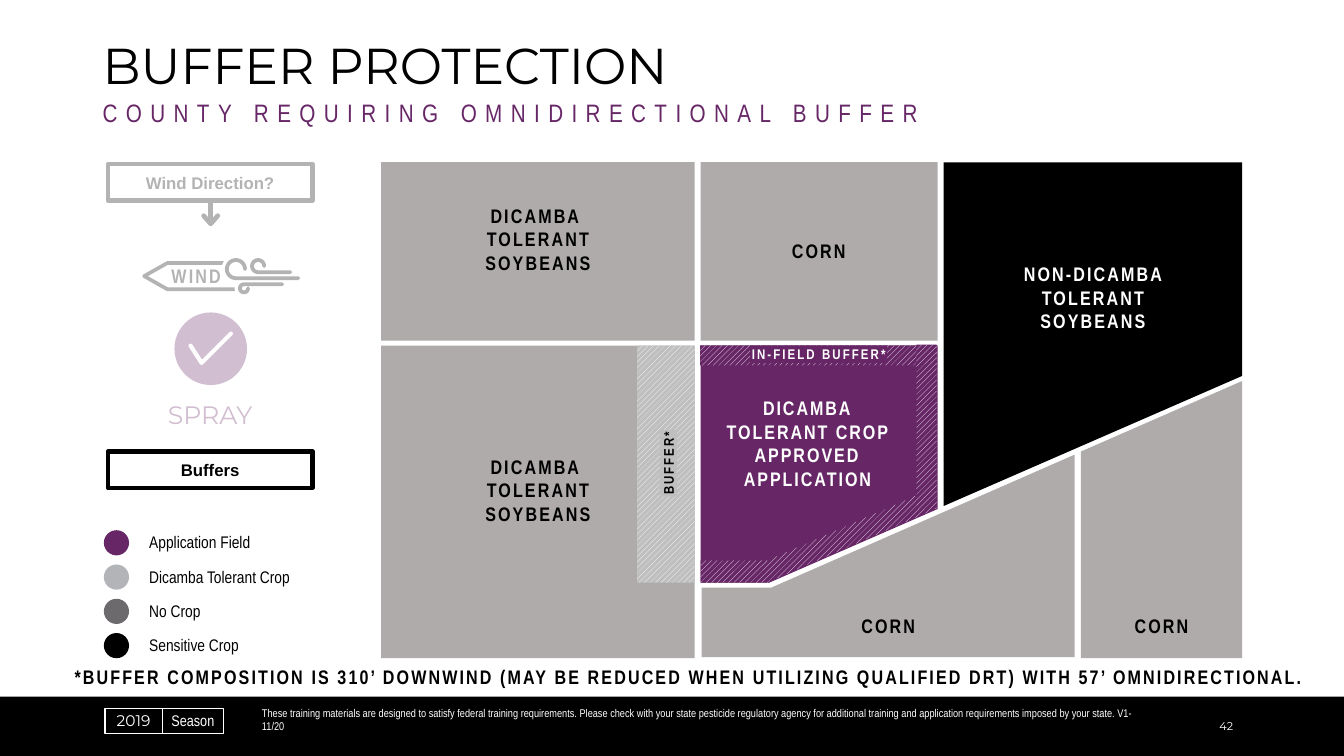
from math import cos, pi, sin

from lxml import etree
from pptx import Presentation
from pptx.dml.color import RGBColor
from pptx.enum.dml import MSO_PATTERN
from pptx.enum.shapes import MSO_CONNECTOR, MSO_SHAPE
from pptx.enum.text import MSO_ANCHOR, PP_ALIGN
from pptx.oxml.ns import qn
from pptx.util import Inches, Pt

RECT, OVAL = MSO_SHAPE.RECTANGLE, MSO_SHAPE.OVAL
LEFT, CENTER, RIGHT = PP_ALIGN.LEFT, PP_ALIGN.CENTER, PP_ALIGN.RIGHT
TOP, MIDDLE, BOTTOM = MSO_ANCHOR.TOP, MSO_ANCHOR.MIDDLE, MSO_ANCHOR.BOTTOM
DIAGONAL = MSO_PATTERN.WIDE_UPWARD_DIAGONAL
STRAIGHT = MSO_CONNECTOR.STRAIGHT
NARROW, MONT, ARIAL = "Arial Narrow", "Montserrat", "Arial"
BLACK, WHITE, PURPLE = "000000", "FFFFFF", "672767"
FIELD, BUFFER = "AFABAB", "BFBFBF"
FLUSH, PADDED, FOOT = (0, 0, 0, 0), (0.1, 0.05, 0.1, 0.05), (0.1, 0.05, 0.1, 0)


def color(code):
    return RGBColor.from_string(code)


def paint(shape, fill=None, line=None, width=1):
    shape.shadow.inherit = False
    if fill:
        shape.fill.solid()
        shape.fill.fore_color.rgb = color(fill)
    else:
        shape.fill.background()
    if line:
        shape.line.color.rgb = color(line)
        shape.line.width = Pt(width)
    else:
        shape.line.fill.background()


def block(slide, box, fill=None, line=None, width=1, kind=RECT, turn=0):
    shape = slide.shapes.add_shape(kind, *map(Inches, box))
    paint(shape, fill, line, width)
    shape.rotation = turn
    return shape


def hatch(slide, box, back, turn=0):
    shape = block(slide, box, back, turn=turn)
    shape.fill.patterned()
    shape.fill.pattern = DIAGONAL
    shape.fill.fore_color.rgb = color(WHITE)
    shape.fill.back_color.rgb = color(back)


def outline(slide, points, fill=None, line=None, width=1, close=True):
    """Draw a polygon, or a round-ended stroke if it is not closed."""
    path = [(Inches(x), Inches(y)) for x, y in points]
    pen = slide.shapes.build_freeform(*path[0], scale=1.0)
    pen.add_line_segments(path[1:], close=close)
    shape = pen.convert_to_shape()
    paint(shape, fill, line, width)
    if line and not close:
        shape.line._get_or_add_ln().set("cap", "rnd")
        etree.SubElement(shape.line._get_or_add_ln(), qn("a:round"))


def write(shape, text, size, tone=BLACK, font=NARROW, bold=False, gap=0,
          align=LEFT, anchor=TOP, inset=FLUSH, wrap=False, lead=None):
    """Fill a shape with text; gap is letter spacing in points."""
    frame = shape.text_frame
    frame.text = text
    frame.word_wrap = wrap
    frame.vertical_anchor = anchor
    (frame.margin_left, frame.margin_top,
     frame.margin_right, frame.margin_bottom) = map(Inches, inset)
    for para in frame.paragraphs:
        para.alignment = align
        if lead:
            para.line_spacing = lead
        for run in para.runs:
            run.font.name, run.font.size, run.font.bold = font, Pt(size), bold
            run.font.color.rgb = color(tone)
            if gap:
                run.font._element.set("spc", str(int(gap * 100)))


def label(slide, box, text, size, **look):
    write(slide.shapes.add_textbox(*map(Inches, box)), text, size, **look)


def caption(slide, box, text, tone=BLACK, gap=1.5, wrap=False):
    label(slide, box, text, 14, tone=tone, bold=True, gap=gap,
          align=CENTER, wrap=wrap)


def tag(slide, box, text, fill, tone, turn=0):
    write(block(slide, box, fill, turn=turn), text, 10, tone=tone,
          bold=True, gap=1.5, align=CENTER)


def header(slide):
    label(slide, (0.92, 0.95, 11.5, 0.37), "COUNTY REQUIRING OMNIDIRECTIONAL BUFFER",
          18, tone=PURPLE, gap=6, inset=PADDED, wrap=True, lead=0.9)
    label(slide, (0.92, 0.35, 11.5, 0.65), "BUFFER PROTECTION", 36, font=MONT,
          anchor=MIDDLE, inset=PADDED, wrap=True, lead=0.9)


def footer(slide):
    block(slide, (0, 6.91, 13.33, 0.59), BLACK)
    block(slide, (1.04, 7.03, 1.18, 0.25), line=WHITE)
    rule = slide.shapes.add_connector(
        STRAIGHT, *map(Inches, (1.61, 7.03, 1.61, 7.28)))
    rule.line.color.rgb = color(WHITE)
    rule.line.width = Pt(1)
    etree.SubElement(rule._element.spPr, qn("a:effectLst"))
    label(slide, (1.06, 7.07, 0.53, 0.17), "2019", 11, tone=WHITE, font=MONT,
          align=CENTER, anchor=BOTTOM, wrap=True, lead=0.9)
    label(slide, (1.7, 7.07, 0.48, 0.17), "Season", 11, tone=WHITE,
          anchor=BOTTOM, wrap=True, lead=0.9)
    label(slide, (11.83, 6.9, 0.5, 0.37), "42", 8, tone=WHITE, font=MONT,
          align=RIGHT, anchor=BOTTOM, inset=FOOT, wrap=True)
    label(slide, (2.5, 6.9, 9.05, 0.37),
          "These training materials are designed to satisfy federal training "
          "requirements. Please check with your state pesticide regulatory agency "
          "for additional training and application requirements imposed by your "
          "state. V1-11/20", 8, tone=WHITE, anchor=BOTTOM, inset=FOOT, wrap=True)


def fields(slide):
    for box in ((6.95, 1.61, 2.35, 1.77), (3.78, 1.61, 3.11, 1.77),
                (3.78, 3.43, 3.11, 3.1)):
        block(slide, box, FIELD)
    outline(slide, [(9.36, 5.02), (12.32, 3.73), (12.32, 1.61), (9.36, 1.61)], BLACK)
    outline(slide, [(6.95, 3.43), (6.95, 5.78), (7.63, 5.78), (9.3, 5.05),
                    (9.3, 3.43)], PURPLE)
    outline(slide, [(10.66, 4.51), (7.65, 5.83), (6.96, 5.83), (6.96, 6.52),
                    (10.66, 6.52)], FIELD)
    outline(slide, [(10.72, 4.48), (10.72, 6.53), (12.32, 6.53), (12.32, 3.78)], FIELD)
    for x, y in ((8.53, 6.09), (11.24, 6.09), (7.84, 2.37)):
        caption(slide, (x, y, 0.56, 0.24), "CORN")
    for y in (2.02, 4.51):
        caption(slide, (4.8, y, 1.07, 0.71), "DICAMBA \nTOLERANT\nSOYBEANS")
    caption(slide, (10.14, 2.6, 1.4, 0.71), "NON-DICAMBA\nTOLERANT\nSOYBEANS", WHITE)
    caption(slide, (7.16, 3.93, 1.7, 0.94),
            "DICAMBA TOLERANT CROP\nAPPROVED APPLICATION", WHITE, 1.4, True)
    caption(slide, (0.62, 6.6, 12.42, 0.24),
            "*BUFFER COMPOSITION IS 310’ DOWNWIND (MAY BE REDUCED WHEN "
            "UTILIZING QUALIFIED DRT) WITH 57’ OMNIDIRECTIONAL.")


def buffers(slide):
    hatch(slide, (6.32, 3.43, 0.57, 2.35), BUFFER)
    tag(slide, (6.3, 4.51, 0.66, 0.17), "BUFFER*", BUFFER, BLACK, 270)
    hatch(slide, (8.02, 2.35, 0.2, 2.35), PURPLE, 270)
    tag(slide, (7.44, 3.43, 1.36, 0.17), "IN-FIELD BUFFER*", PURPLE, WHITE)
    hatch(slide, (7.18, 5.33, 0.22, 0.68), PURPLE, 270)
    hatch(slide, (8.31, 4.41, 0.2, 1.82), PURPLE, 246.4)
    hatch(slide, (9.09, 3.42, 0.2, 1.63), PURPLE)


def swirl(x, y, radius, end, way):
    """Points of a three-quarter curl about (x, y) and its straight tail."""
    turns = [i * pi / 24 for i in range(37)]
    curl = [(x + radius * cos(t), y - way * radius * sin(t)) for t in turns]
    return curl + [(end, y + way * radius)]


def wind(slide):
    sign = [(2.36, 2.87), (1.66, 2.87), (1.43, 2.74), (1.66, 2.61), (2.36, 2.61)]
    outline(slide, sign, WHITE, WHITE, 7.2)
    outline(slide, sign, line=BLACK, width=2.6)
    gusts = [swirl(2.42, 2.86, 0.04, 2.8, -1), swirl(2.34, 2.67, 0.09, 2.96, 1),
             swirl(2.56, 2.64, 0.06, 2.88, 1)]
    for gust in gusts:
        outline(slide, gust, WHITE, WHITE, 7.6, close=False)
    for gust in gusts:
        outline(slide, gust, None, BLACK, 2.7, close=False)
    caption(slide, (1.69, 2.62, 0.51, 0.24), "WIND")


def legend(slide):
    crops = (("Application Field", PURPLE), ("Dicamba Tolerant Crop", "B2B4B7"),
             ("No Crop", "6C6A6D"), ("Sensitive Crop", BLACK))
    for i, (name, tone) in enumerate(crops):
        y = 5.26 + 0.34 * i
        block(slide, (1.03, y, 0.25, 0.25), tone, kind=OVAL)
        label(slide, (1.48, y + 0.02, 1.41, 0.23), name, 12)


def panel(slide):
    block(slide, (1.73, 3.1, 0.72, 0.72), PURPLE, kind=OVAL)
    outline(slide, [(1.89, 3.43), (2, 3.6), (2.29, 3.31)], None, WHITE, 3, False)
    wind(slide)
    for y, text in ((1.63, "Wind Direction?"), (4.48, "Buffers")):
        frame = block(slide, (1.07, y, 2.03, 0.36), line=BLACK, width=3.1)
        write(frame, text, 12, font=ARIAL, bold=True, align=CENTER, anchor=MIDDLE)
    outline(slide, [(2.09, 2.02), (2.09, 2.2)], None, BLACK, 3.4, False)
    outline(slide, [(2.02, 2.14), (2.09, 2.22), (2.16, 2.14)], None, BLACK, 3.4, False)
    label(slide, (0.97, 3.91, 2.23, 0.4), "SPRAY", 18, tone=PURPLE, font=MONT,
          align=CENTER, inset=PADDED, wrap=True)
    veil = block(slide, (0.92, 1.43, 2.68, 2.85), WHITE)
    shade = veil.fill._xPr.find(qn("a:solidFill"))[0]
    etree.SubElement(shade, qn("a:alpha"), val="70000")


def main():
    deck = Presentation()
    deck.slide_width, deck.slide_height = Inches(13.33), Inches(7.5)
    slide = deck.slides.add_slide(deck.slide_layouts[6])
    footer(slide)
    fields(slide)
    legend(slide)
    header(slide)
    panel(slide)
    buffers(slide)
    deck.save("out.pptx")


if __name__ == "__main__":
    main()
